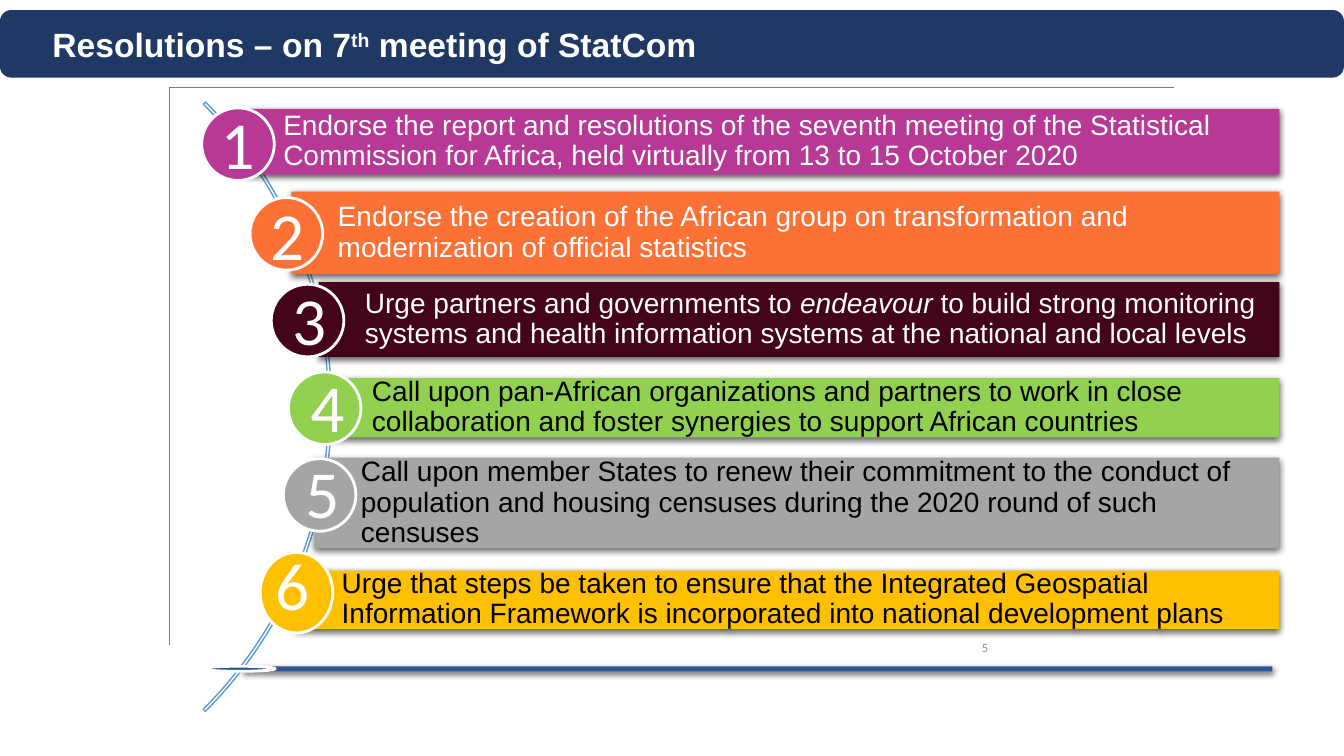
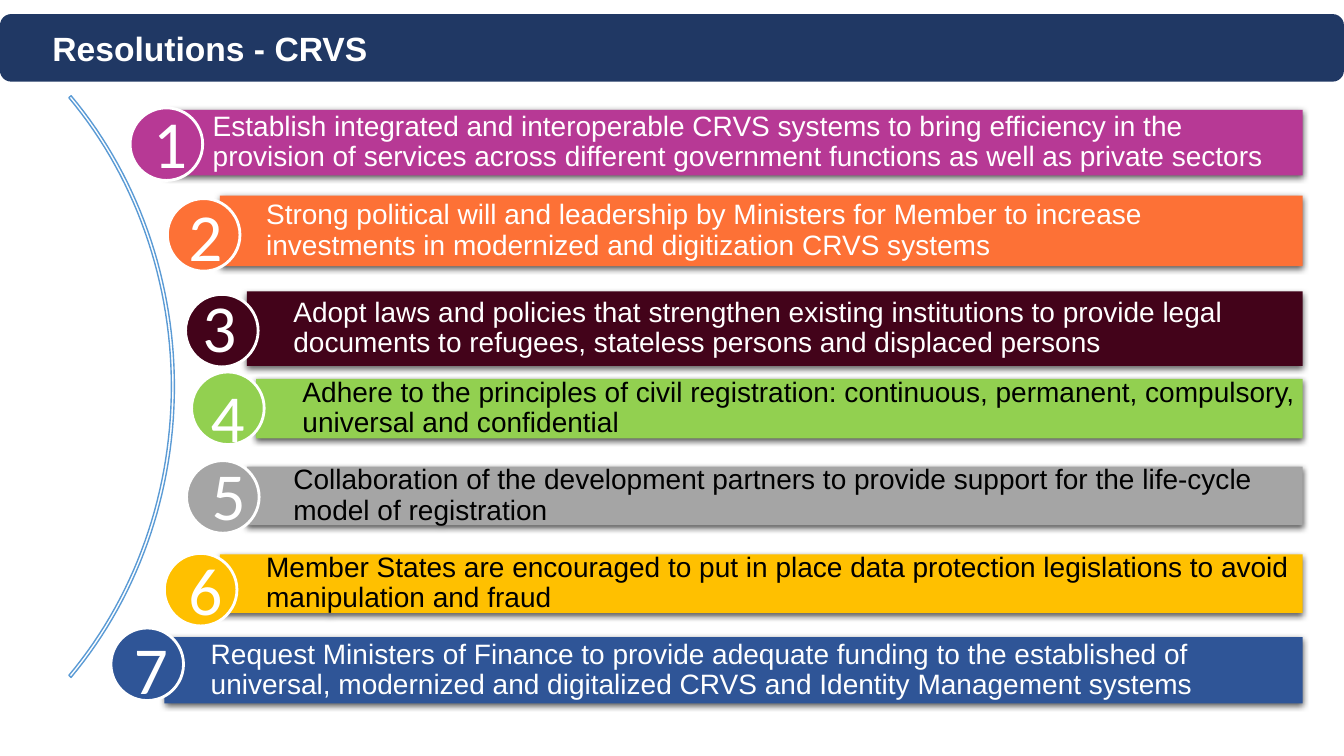
from dataclasses import dataclass
from math import atan2, cos, pi, sin

from lxml import etree
from pptx import Presentation
from pptx.dml.color import RGBColor
from pptx.enum.shapes import MSO_SHAPE as SHAPE
from pptx.enum.text import MSO_ANCHOR as ANCHOR, PP_ALIGN as ALIGN
from pptx.oxml.ns import qn
from pptx.util import Inches, Pt


@dataclass(frozen=True)
class Theme:
    white: str = "FFFFFF"
    black: str = "000000"
    band: str = "203864"
    arc: str = "5B9BD5"
    frame: str = "7B7B7B"
    page_number: str = "8C8C8C"
    rule: str = "2F5597"
    # Fill and text colour of each numbered row
    rows: tuple = (("B73995", "FFFFFF"), ("FD7136", "FFFFFF"),
                   ("43031A", "FFFFFF"), ("92D050", "000000"),
                   ("A5A5A5", "000000"), ("FFC000", "000000"),
                   ("2F5597", "FFFFFF"))
    body_font: str = "Arial"
    number_font: str = "Calibri"
    title_size: int = 24
    body_size: int = 20
    number_size: int = 48
    page_size: int = 9


@dataclass(frozen=True)
class Box:
    left: float
    top: float
    width: float
    height: float

    @property
    def emu(self):
        return [Inches(v) for v in (self.left, self.top, self.width, self.height)]


@dataclass(frozen=True)
class Row:
    """A resolution; number is the offset of its digit from the badge."""
    segments: tuple
    bar_left: float
    bar_top: float
    bar_height: float
    badge: tuple
    number: tuple
    badge_height: float = 0.72


THEME = Theme()
SLIDE_WIDTH, SLIDE_HEIGHT = 13.33, 7.5
BADGE_WIDTH = 0.72
ARC_THICKNESS = 0.03

STATCOM_TITLE = ("Resolutions – on 7", ("th", "super"), " meeting of StatCom")
STATCOM_ROWS = (
    Row(("Endorse the report and resolutions of the seventh meeting of the "
         "Statistical Commission for Africa, held virtually from 13 to 15 October 2020",),
        2.35, 1.08, 0.65, (2, 1.07), (0.09, -0.1)),
    Row(("Endorse the creation of the African group on transformation and "
         "modernization of official statistics",),
        2.89, 1.9, 0.82, (2.48, 1.96), (0.1, -0.09)),
    Row(("Urge partners and governments to ", ("endeavour", "italic"),
         " to build strong monitoring systems and health information systems "
         "at the national and local levels"),
        3.16, 2.8, 0.74, (2.69, 2.82), (0.11, -0.11)),
    Row(("Call upon pan-African organizations and partners to work in close "
         "collaboration and foster synergies to support African countries",),
        3.23, 3.75, 0.59, (2.86, 3.69), (0.12, -0.12)),
    Row(("Call upon member States to renew their commitment to the conduct of "
         "population and housing censuses during the 2020 round of such censuses",),
        3.12, 4.54, 0.9, (2.81, 4.55), (0.12, -0.12)),
    Row(("Urge that steps be taken to ensure that the Integrated Geospatial "
         "Information Framework is incorporated into national development plans",),
        2.93, 5.66, 0.58, (2.58, 5.48), (0.05, -0.14), 0.8),
)

CRVS_TITLE = ("Resolutions - CRVS",)
CRVS_ROWS = (
    Row(("Establish integrated and interoperable CRVS systems to bring efficiency "
         "in the provision of services across different government functions as "
         "well as private sectors",),
        1.65, 1.09, 0.65, (1.29, 1.07), (0.13, -0.11)),
    Row(("Strong political will and leadership by Ministers for Member to increase "
         "investments in modernized and digitization CRVS systems",),
        2.18, 1.94, 0.7, (1.66, 1.97), (0.11, -0.09)),
    Row(("Adopt laws and policies that strengthen existing institutions to provide "
         "legal documents to refugees, stateless persons and displaced persons",),
        2.45, 2.89, 0.74, (1.84, 2.92), (0.07, -0.14)),
    Row(("Adhere to the principles of civil registration: continuous, permanent, "
         "compulsory, universal and confidential",),
        2.54, 3.76, 0.59, (1.9, 3.69), (0.09, -0.02)),
    Row(("Collaboration of the development partners to provide support for the "
         "life-cycle model of registration",),
        2.45, 4.63, 0.58, (1.85, 4.57), (0.15, -0.12)),
    Row(("Member States are encouraged to put in place data protection "
         "legislations to avoid manipulation and fraud",),
        2.18, 5.5, 0.58, (1.63, 5.49), (0.14, -0.1)),
    Row(("Request Ministers of Finance to provide adequate funding to the "
         "established of universal, modernized and digitalized CRVS and Identity "
         "Management systems",),
        1.63, 6.32, 0.66, (1.1, 6.23), (0.13, -0.06)),
)


def rgb(color):
    return RGBColor.from_string(color)


def style_font(font, size, color, name, bold=False):
    font.size, font.name, font.bold = Pt(size), name, bold
    font.color.rgb = rgb(color)


def write_segments(paragraph, segments, size, color, bold=False):
    """Add plain strings and (text, "italic" or "super") pairs as runs."""
    for segment in segments:
        text, accent = (segment, None) if isinstance(segment, str) else segment
        run = paragraph.add_run()
        run.text = text
        style_font(run.font, size, color, THEME.body_font, bold)
        if accent == "italic":
            run.font.italic = True
        elif accent == "super":
            run.font._element.set("baseline", "30000")


def set_margins(frame, left, top, right, bottom):
    frame.margin_left, frame.margin_top = Inches(left), Inches(top)
    frame.margin_right, frame.margin_bottom = Inches(right), Inches(bottom)


def add_filled(slide, kind, box, fill, line=None, line_width=2):
    shape = slide.shapes.add_shape(kind, *box.emu)
    shape.shadow.inherit = False
    shape.fill.solid()
    shape.fill.fore_color.rgb = rgb(fill)
    if line:
        shape.line.color.rgb = rgb(line)
        shape.line.width = Pt(line_width)
    else:
        shape.line.fill.background()
    return shape


def add_drop_shadow(shape):
    effects = shape.element.spPr.find(qn("a:effectLst"))
    shadow = etree.SubElement(effects, qn("a:outerShdw"), blurRad=str(Pt(4.5)),
                              dist=str(Pt(1.5)), dir="5400000",
                              algn="ctr", rotWithShape="0")
    color = etree.SubElement(shadow, qn("a:srgbClr"), val=THEME.black)
    etree.SubElement(color, qn("a:alpha"), val="63000")


def add_outline(slide, points, color, width, close):
    corners = [(Inches(x), Inches(y)) for x, y in points]
    builder = slide.shapes.build_freeform(*corners[0])
    builder.add_line_segments(corners[1:], close=close)
    outline = builder.convert_to_shape()
    outline.shadow.inherit = False
    outline.fill.background()
    outline.line.color.rgb = rgb(color)
    outline.line.width = Pt(width)


def add_title_band(slide, box, segments):
    title = slide.shapes.title
    band = add_filled(slide, SHAPE.ROUNDED_RECTANGLE, box, THEME.band)
    title.element.addprevious(band.element)
    title.left, title.top, title.width, title.height = box.emu
    frame = title.text_frame
    frame.word_wrap = True
    frame.vertical_anchor = ANCHOR.MIDDLE
    set_margins(frame, 0.52, 0.1, 0.1, 0.1)
    paragraph = frame.paragraphs[0]
    paragraph.alignment = ALIGN.LEFT
    write_segments(paragraph, segments, THEME.title_size, THEME.white, bold=True)


def add_arc(slide, ellipse, steps=60):
    """Draw the thin ring that spans the right-hand quarter of an ellipse."""
    rx, ry = ellipse.width / 2, ellipse.height / 2
    center_x, center_y = ellipse.left + rx, ellipse.top + ry
    end = atan2(rx, ry)
    angles = [end * (2 * step / steps - 1) for step in range(steps + 1)]

    def edge(inset):
        return [(center_x + (rx - inset) * cos(angle),
                 center_y + (ry - inset) * sin(angle)) for angle in angles]

    add_outline(slide, edge(0) + edge(ARC_THICKNESS)[::-1], THEME.arc, 1, close=True)


def add_bar(slide, box, segments, fill, color):
    bar = add_filled(slide, SHAPE.RECTANGLE, box, fill)
    add_drop_shadow(bar)
    frame = bar.text_frame
    frame.word_wrap = True
    frame.vertical_anchor = ANCHOR.MIDDLE
    set_margins(frame, 0.46, 0.06, 0.06, 0.06)
    paragraph = frame.paragraphs[0]
    paragraph.alignment = ALIGN.LEFT
    paragraph.line_spacing = 0.9
    write_segments(paragraph, segments, THEME.body_size, color)


def add_badge(slide, box, number, offset, fill):
    add_filled(slide, SHAPE.OVAL, box, fill, THEME.white)
    digit_box = Box(box.left + offset[0], box.top + offset[1], 0.54, 0.91)
    digit = slide.shapes.add_textbox(*digit_box.emu)
    frame = digit.text_frame
    frame.word_wrap = True
    frame.text = str(number)
    style_font(frame.paragraphs[0].runs[0].font, THEME.number_size,
               THEME.white, THEME.number_font)


def add_rows(slide, rows, right):
    """Stack numbered rows whose bars all end at the same right edge."""
    for number, (row, (fill, color)) in enumerate(zip(rows, THEME.rows), 1):
        bar = Box(row.bar_left, row.bar_top, right - row.bar_left, row.bar_height)
        add_bar(slide, bar, row.segments, fill, color)
        badge = Box(*row.badge, BADGE_WIDTH, row.badge_height)
        add_badge(slide, badge, number, row.number, fill)


def add_frame(slide, box):
    """Draw the left and top edges of a box."""
    right, bottom = box.left + box.width, box.top + box.height
    points = [(box.left, bottom), (box.left, box.top), (right, box.top)]
    add_outline(slide, points, THEME.frame, 0.25, close=False)


def add_page_number(slide, box, number):
    frame = slide.shapes.add_textbox(*box.emu).text_frame
    frame.vertical_anchor = ANCHOR.MIDDLE
    frame.word_wrap = True
    frame.text = str(number)
    paragraph = frame.paragraphs[0]
    paragraph.alignment = ALIGN.RIGHT
    style_font(paragraph.runs[0].font, THEME.page_size,
               THEME.page_number, THEME.number_font)


def add_closing_rule(slide, box):
    tip_width = BADGE_WIDTH
    rule = Box(box.left + 0.41, box.top, box.width - 0.41, box.height)
    add_drop_shadow(add_filled(slide, SHAPE.RECTANGLE, rule, THEME.rule))
    tip = Box(box.left, box.top, tip_width, box.height)
    add_filled(slide, SHAPE.OVAL, tip, THEME.rule, THEME.white)


def add_resolution_slide(prs, title, band_top, ellipse):
    slide = prs.slides.add_slide(prs.slide_layouts[5])
    add_title_band(slide, Box(0, band_top, SLIDE_WIDTH, 0.67), title)
    add_arc(slide, ellipse)
    return slide


def main():
    prs = Presentation()
    prs.slide_width, prs.slide_height = Inches(SLIDE_WIDTH), Inches(SLIDE_HEIGHT)

    statcom = add_resolution_slide(prs, STATCOM_TITLE, 0.1, Box(-5.26, -0.24, 8.55, 8.55))
    add_frame(statcom, Box(1.68, 0.87, 9.96, 5.53))
    add_page_number(statcom, Box(9.62, 6.37, 0.28, 0.11), 5)
    add_rows(statcom, STATCOM_ROWS, right=12.69)
    add_closing_rule(statcom, Box(2.01, 6.61, 10.61, 0.05))

    crvs = add_resolution_slide(prs, CRVS_TITLE, 0.14, Box(-6.09, -0.44, 7.82, 8.55))
    add_rows(crvs, CRVS_ROWS, right=12.92)

    prs.save("out.pptx")


if __name__ == "__main__":
    main()
